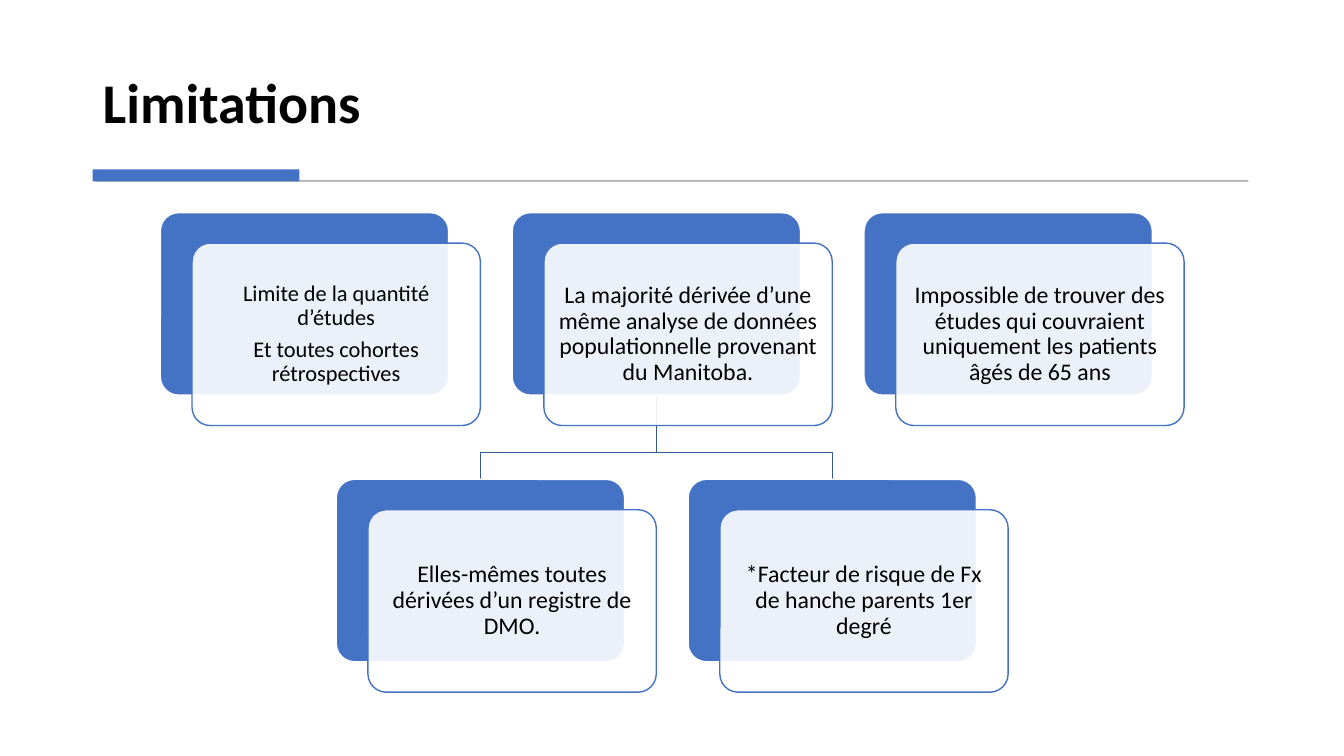
import pptx
import pptx.util
import pptx.dml.color
import pptx.enum.shapes
import pptx.enum.text
import pptx.oxml.ns
import lxml.etree

RGB = pptx.dml.color.RGBColor
KIND = pptx.enum.shapes.MSO_SHAPE
ALIGN = pptx.enum.text.PP_ALIGN
ANCHOR = pptx.enum.text.MSO_ANCHOR
Pt = pptx.util.Pt

BLUE = RGB(0x44, 0x72, 0xC4)
NAVY = RGB(0x36, 0x5B, 0x9D)
GREY = RGB(0x59, 0x59, 0x59)
WHITE = RGB(0xFF, 0xFF, 0xFF)
BLACK = RGB(0, 0, 0)

WIDE = pptx.util.Inches(13.33)
HIGH = pptx.util.Inches(7.5)

# Card grid, in percent of the slide's width and height
LEFT, TOP = 11.93, 28.13
STEP_X, STEP_Y = 26.18, 35.27
CARD_W, CARD_H = 21.45, 24.13
SHIFT_X, SHIFT_Y = 2.36, 4.03

# Column, row, text size, paragraphs
CARDS = [
    (0, 0, 16, ["Limite de la quantité d’études",
                "Et toutes cohortes rétrospectives"]),
    (1, 0, 17, ["La majorité dérivée d’une même analyse de données "
                "populationnelle provenant du Manitoba."]),
    (0.5, 1, 17, ["Elles-mêmes toutes dérivées d’un registre de DMO."]),
    (1.5, 1, 17, ["*Facteur de risque de Fx de hanche parents 1er degré"]),
    (2, 0, 17, ["Impossible de trouver des études qui couvraient "
                "uniquement les patients âgés de 65 ans"]),
]


def px(share):
    return round(WIDE * share / 100)


def py(share):
    return round(HIGH * share / 100)


def place(box):
    x, y, w, h = box
    return px(x), py(y), px(w), py(h)


def fade(color, share):
    """Set the opacity, in percent, of a solid fill or line."""
    for node in color.iter(pptx.oxml.ns.qn("a:srgbClr")):
        alpha = lxml.etree.SubElement(node, pptx.oxml.ns.qn("a:alpha"))
        alpha.set("val", str(share * 1000))


def block(slide, kind, box, fill, line=None, width=1, alpha=100):
    shape = slide.shapes.add_shape(kind, *place(box))
    shape.shadow.inherit = False
    shape.fill.solid()
    shape.fill.fore_color.rgb = fill
    if kind == KIND.ROUNDED_RECTANGLE:
        shape.adjustments[0] = 0.1
    if alpha < 100:
        fade(shape.fill._xPr, alpha)
    if line is None:
        shape.line.fill.background()
    else:
        shape.line.color.rgb = line
        shape.line.width = Pt(width)
    return shape


def write(shape, lines, size, bold=False, align=ALIGN.LEFT,
          anchor=ANCHOR.MIDDLE, inset=None, after=0):
    frame = shape.text_frame
    frame.word_wrap = True
    frame.vertical_anchor = anchor
    if inset is not None:
        frame.margin_left = frame.margin_right = inset
        frame.margin_top = frame.margin_bottom = inset
    for i, line in enumerate(lines):
        para = frame.add_paragraph() if i else frame.paragraphs[0]
        para.alignment = align
        para.line_spacing = 0.9
        para.space_after = Pt(after)
        run = para.add_run()
        run.text = line
        run.font.name = "Calibri"
        run.font.size = Pt(size)
        run.font.bold = bold
        run.font.color.rgb = BLACK


def head(slide, box):
    """Title, thin rule and accent bar."""
    x, y, w, h = box
    title = slide.shapes.add_textbox(*place((x, y, w, 14.8)))
    write(title, ["Limitations"], 40, bold=True, anchor=ANCHOR.BOTTOM)
    rule = block(slide, KIND.RECTANGLE, (x + 0.23, y + h, w - 0.45, 0.13),
                 GREY, line=GREY, width=0.75)
    fade(rule._element.spPr, 30)
    block(slide, KIND.RECTANGLE, (x, y + h - 1.47, 15.38, 1.6), BLUE)


def spot(col, row):
    return LEFT + col * STEP_X, TOP + row * STEP_Y, CARD_W, CARD_H


def fork(slide, start, ends):
    """Elbow lines from the foot of one card to the tops of others."""
    x, y, w, h = start
    mid, foot = x + w / 2, y + h
    bend = foot + 7.6
    for left, top, wide, _ in ends:
        tip = left + wide / 2
        pen = slide.shapes.build_freeform(px(mid), py(foot))
        pen.add_line_segments([(px(mid), py(bend)), (px(tip), py(bend)),
                               (px(tip), py(top))], close=False)
        elbow = pen.convert_to_shape()
        elbow.shadow.inherit = False
        elbow.fill.background()
        elbow.line.color.rgb = NAVY
        elbow.line.width = Pt(1)


def card(slide, box, lines, size):
    """Blue back plate with a translucent text plate in front."""
    x, y, w, h = box
    block(slide, KIND.ROUNDED_RECTANGLE, box, BLUE, line=WHITE)
    front = block(slide, KIND.ROUNDED_RECTANGLE,
                  (x + SHIFT_X, y + SHIFT_Y, w, h), WHITE, line=BLUE, alpha=90)
    write(front, lines, size, align=ALIGN.CENTER,
          inset=pptx.util.Inches(0.07), after=size * 0.35)


def main():
    deck = pptx.Presentation()
    deck.slide_width, deck.slide_height = WIDE, HIGH
    slide = deck.slides.add_slide(deck.slide_layouts[6])

    head(slide, (6.9, 3.73, 86.18, 20.14))
    fork(slide, spot(1, 0), [spot(1.5, 1), spot(0.5, 1)])
    for col, row, size, lines in CARDS:
        card(slide, spot(col, row), lines, size)

    deck.save("out.pptx")


if __name__ == "__main__":
    main()
